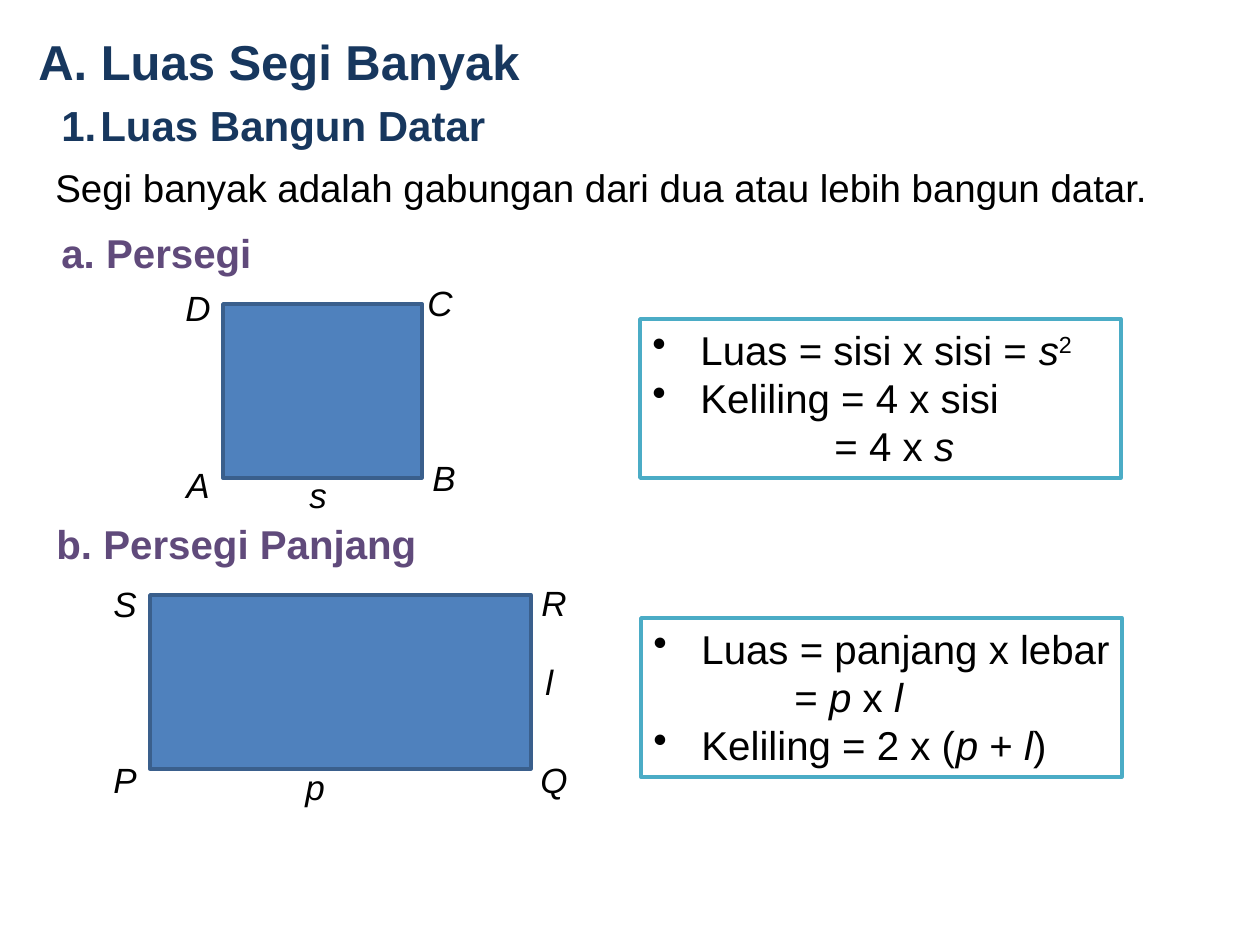
"""Build the slide on the area of squares and rectangles."""
from lxml import etree
from pptx import Presentation
from pptx.dml.color import RGBColor
from pptx.enum.shapes import MSO_SHAPE
from pptx.enum.text import MSO_ANCHOR, PP_ALIGN
from pptx.oxml.ns import qn
from pptx.util import Emu, Pt

RECT = MSO_SHAPE.RECTANGLE
TOP = MSO_ANCHOR.TOP
LEFT = PP_ALIGN.LEFT
PX = 914400 / 126

COLORS = {
    "title": "17375E", "section": "604A7B", "text": "000000", "white": "FFFFFF",
    "shape": "4F81BD", "edge": "3A5F8C", "frame": "4BACC6",
}
FORMATS = {
    "title": {"size": Pt(28), "bold": True},
    "subtitle": {"size": Pt(24), "bold": True},
    "body": {"size": Pt(22)},
    "section": {"size": Pt(23), "bold": True},
    "formula": {"size": Pt(23)},
    "label": {"size": Pt(20), "italic": True},
}
BULLETS = {
    "dot": ("a:buChar", {"char": "•"}),
    "number": ("a:buAutoNum", {"type": "arabicPeriod"}),
}

prs = Presentation()
prs.slide_width, prs.slide_height = Emu(9144000), Emu(6858000)
s = prs.slides.add_slide(prs.slide_layouts[6])


def add_rect(box, fill, line=None):
    sp = s.shapes.add_shape(RECT, *[Emu(round(v * PX)) for v in box])
    sp.shadow.inherit = False
    sp.fill.solid()
    sp.fill.fore_color.rgb = RGBColor.from_string(COLORS[fill])
    if line:
        sp.line.color.rgb = RGBColor.from_string(COLORS[line])
        sp.line.width = Pt(2)
    else:
        sp.line.fill.background()
    return sp


def write(sp, paragraphs, kind, color="text"):
    tf = sp.text_frame
    tf.word_wrap = True
    tf.vertical_anchor = TOP
    for i, (margin, indent, bullet, runs) in enumerate(paragraphs):
        p = tf.add_paragraph() if i else tf.paragraphs[0]
        p.alignment = LEFT
        pPr = p._p.get_or_add_pPr()
        pPr.set("marL", str(round(margin * PX)))
        pPr.set("indent", str(round(indent * PX)))
        if bullet:
            tag, attrs = BULLETS[bullet]
            etree.SubElement(pPr, qn(tag), attrs)
        for text, style in runs:
            r = p.add_run()
            r.text = text
            r.font.name = "Arial"
            r.font.color.rgb = RGBColor.from_string(COLORS[color])
            for name, value in FORMATS[kind].items():
                setattr(r.font, name, value)
            if style == "italic":
                r.font.italic = True
            elif style == "super":
                r._r.get_or_add_rPr().set("baseline", "30000")


statement = add_rect((43, 158, 1194, 59), "white")
write(statement, [(0, 0, None, [
    ("Segi banyak adalah gabungan dari dua atau lebih bangun datar.", "")])], "body")

for box in [(223, 304, 199, 174), (150, 595, 381, 174)]:
    add_rect(box, "shape", "edge")

headings = [
    ("A. Luas Segi Banyak", (26, 25, 857, 72), "title", "title", 0, 0, None),
    ("Luas Bangun Datar", (26, 93, 478, 63), "subtitle", "title", 62, -39, "number"),
    ("a. Persegi", (26, 222, 249, 63), "section", "section", 23, 0, None),
    ("b. Persegi Panjang", (21, 513, 412, 62), "section", "section", 23, 0, None),
]
for text, box, kind, color, margin, indent, bullet in headings:
    sp = s.shapes.add_textbox(*[Emu(round(v * PX)) for v in box])
    write(sp, [(margin, indent, bullet, [(text, "")])], kind, color)

labels = [
    ("A", 174, 457), ("B", 420, 450), ("C", 415, 275), ("D", 173, 280), ("s", 297, 467),
    ("P", 101, 752), ("Q", 528, 752), ("R", 529, 575), ("S", 101, 576), ("p", 293, 759),
    ("l", 533, 654),
]
for text, x, y in labels:
    sp = s.shapes.add_textbox(*[Emu(round(v * PX)) for v in (x, y, 50, 55)])
    write(sp, [(0, 0, None, [(text, "")])], "label")

formulas = [
    ((640, 319, 481, 159), [
        (48, -48, "dot", [("Luas = sisi x sisi = ", ""), ("s", "italic"), ("2", "super")]),
        (48, -48, "dot", [("Keliling = 4 x sisi", "")]),
        (182, 0, None, [("= 4 x ", ""), ("s", "italic")]),
    ]),
    ((641, 618, 481, 159), [
        (48, -48, "dot", [("Luas = panjang x lebar", "")]),
        (141, 0, None, [("= ", ""), ("p", "italic"), (" x ", ""), ("l", "italic")]),
        (48, -48, "dot", [("Keliling = 2 x (", ""), ("p", "italic"), (" + ", ""),
                          ("l", "italic"), (")", "")]),
    ]),
]
for box, paragraphs in formulas:
    sp = add_rect(box, "white", "frame")
    sp.text_frame.margin_right = 0
    write(sp, paragraphs, "formula")

prs.save("out.pptx")
